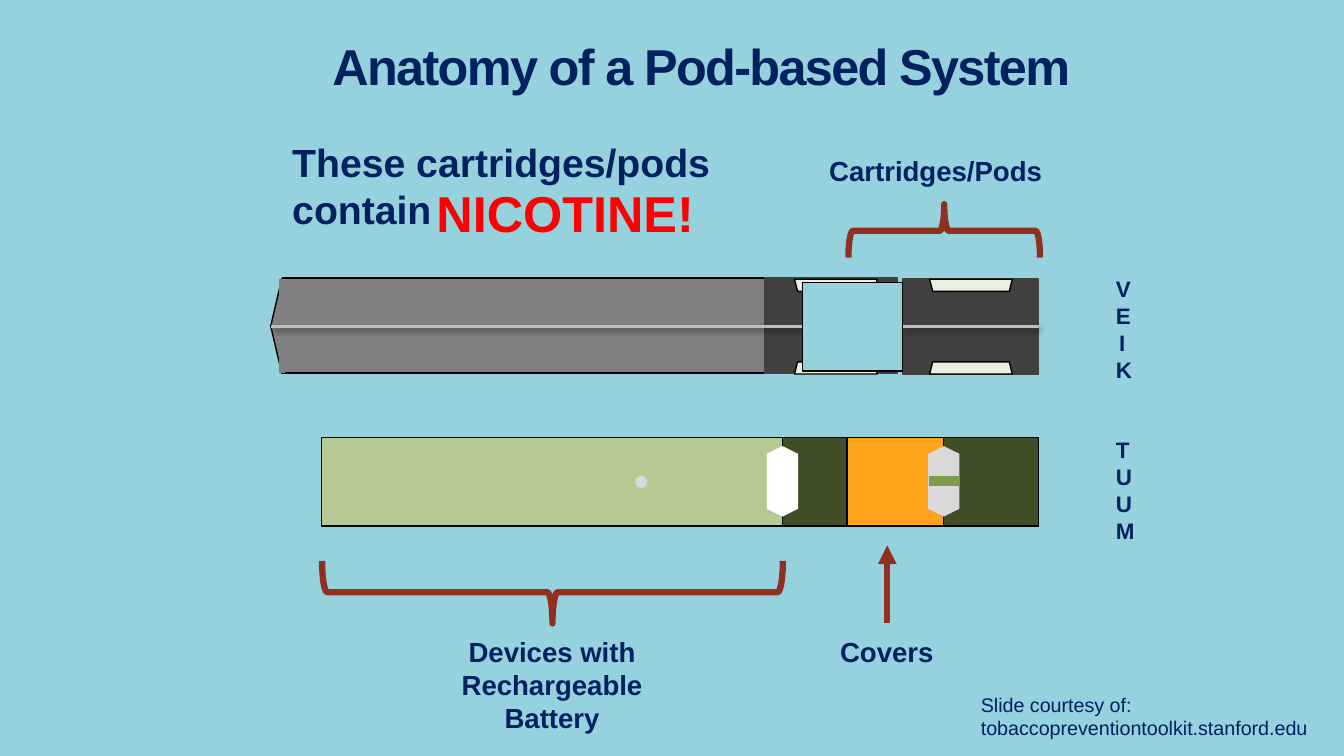
from dataclasses import dataclass

from lxml import etree
from pptx import Presentation
from pptx import util as u
from pptx.dml.color import RGBColor
from pptx.enum import shapes, text
from pptx.oxml import ns

G = shapes.MSO_SHAPE
PX = 9144


@dataclass(frozen=True)
class Theme:
    font: str = "Arial"
    sky: str = "96D2DE"
    navy: str = "002060"
    alert: str = "FF0000"
    rust: str = "903020"
    black: str = "000000"
    white: str = "FFFFFF"
    charcoal: str = "404040"
    steel: str = "808080"
    silver: str = "BFBFBF"
    pale: str = "D9D9D9"
    ivory: str = "EAF0E0"
    forest: str = "3F4E26"
    leaf: str = "7E9C4C"
    sage: str = "B5CA92"
    orange: str = "FFA319"
    big: float = 36
    lead: float = 28
    body: float = 19.7
    letter: float = 16
    note: float = 14.1


def px(*lengths):
    return [u.Emu(n * PX) for n in lengths]


def rgb(colour):
    return RGBColor.from_string(colour)


def write(tf, content, size, colour, font, bold=True, align=None, leading=None, spacing=None):
    tf.word_wrap = True
    tf.auto_size = text.MSO_AUTO_SIZE.NONE
    for i, line in enumerate(content.split("\n")):
        p = tf.paragraphs[0] if i == 0 else tf.add_paragraph()
        p.alignment = align
        p.line_spacing = leading
        r = p.add_run()
        r.text = line
        r.font.name, r.font.size, r.font.bold = font, u.Pt(size), bold
        r.font.color.rgb = rgb(colour)
        if spacing is not None:
            r.font._element.set("spc", str(spacing))


class Deck:
    def __init__(self, prs, theme):
        self.t = theme
        self.s = prs.slides.add_slide(prs.slide_layouts[5])
        self.s.background.fill.solid()
        self.s.background.fill.fore_color.rgb = rgb(theme.sky)

    def title(self, content, x, y, w, h):
        sp = self.s.shapes.title
        sp.left, sp.top, sp.width, sp.height = px(x, y, w, h)
        tf = sp.text_frame
        tf.vertical_anchor = text.MSO_ANCHOR.MIDDLE
        tf.margin_left, tf.margin_top, tf.margin_right, tf.margin_bottom = px(6, 6, 6, 6)
        write(tf, content, self.t.big, self.t.navy, self.t.font,
              align=text.PP_ALIGN.CENTER, leading=0.85, spacing=-120)

    def label(self, content, x, y, w, h, size, colour=None, bold=True, centred=True):
        tf = self.s.shapes.add_textbox(*px(x, y, w, h)).text_frame
        write(tf, content, size, colour or self.t.navy, self.t.font, bold=bold,
              align=text.PP_ALIGN.CENTER if centred else text.PP_ALIGN.LEFT)

    def shape(self, kind, x, y, w, h, fill=None, line=None, weight=1, turn=0):
        sp = self.s.shapes.add_shape(kind, *px(x, y, w, h))
        sp.shadow.inherit = False
        sp.rotation = turn
        if fill:
            sp.fill.solid()
            sp.fill.fore_color.rgb = rgb(fill)
        else:
            sp.fill.background()
        if line:
            sp.line.color.rgb = rgb(line)
            sp.line.width = u.Pt(weight)
        else:
            sp.line.fill.background()
        return sp

    def line(self, x1, y1, x2, y2, colour, weight, arrow=False, shadow=False):
        c = self.s.shapes.add_connector(shapes.MSO_CONNECTOR.STRAIGHT, *px(x1, y1, x2, y2))
        c.line.color.rgb = rgb(colour)
        c.line.width = u.Pt(weight)
        spPr = c._element.spPr
        if arrow:
            etree.SubElement(spPr.find(ns.qn("a:ln")), ns.qn("a:tailEnd"), type="triangle")
        effects = etree.SubElement(spPr, ns.qn("a:effectLst"))
        if shadow:
            outer = etree.SubElement(effects, ns.qn("a:outerShdw"), blurRad="50800",
                                     dist="38100", dir="2700000", algn="tl", rotWithShape="0")
            tone = etree.SubElement(outer, ns.qn("a:srgbClr"), val=self.t.black)
            etree.SubElement(tone, ns.qn("a:alpha"), val="40000")
        return c

    def brace(self, x, y, w, h, turn):
        self.shape(G.LEFT_BRACE, x, y, w, h, line=self.t.rust, weight=4.5, turn=turn)

    def notches(self, x):
        for y, turn in ((359, 0), (277, 180)):
            self.shape(G.TRAPEZOID, x, y, 82, 12, self.t.ivory, self.t.black, turn=turn)

    def window(self, x, fill):
        self.shape(G.HEXAGON, x, 462, 70, 31, fill, turn=90)


def draw_lower_device(d):
    t = d.t
    for x, w, fill in ((776, 94, t.forest), (936, 94, t.forest),
                       (840, 96, t.orange), (319, 457, t.sage)):
        d.shape(G.RECTANGLE, x, 434, w, 88, fill, t.black)
    d.window(901, t.pale)
    d.line(921, 477, 952, 477, t.leaf, 7.5)
    d.window(741, t.white)
    d.shape(G.OVAL, 630, 472, 12, 12, t.pale)


def draw_upper_device(d):
    t = d.t
    d.shape(G.RECTANGLE, 280, 276, 480, 94, t.steel, t.black)
    d.shape(G.RECTANGLE, 758, 276, 132, 94, t.charcoal, t.charcoal)
    d.notches(788)
    d.shape(G.ISOSCELES_TRIANGLE, 227, 318, 94, 11, t.steel, t.black, turn=270)
    d.line(280, 277, 280, 370, t.steel, 4.5)
    device_seam = d.line(269, 324, 796, 324, t.silver, 2.25, shadow=True)
    pod = d.shape(G.RECTANGLE, 895, 277, 135, 94, t.charcoal, t.charcoal)
    d.notches(922)
    pod_seam = d.line(895, 324, 1030, 324, t.silver, 2.25, shadow=True)
    pod_seam.begin_connect(pod, 1)
    pod_seam.end_connect(pod, 3)
    gap = d.shape(G.RECTANGLE, 796, 280, 99, 88, t.sky, t.black)
    device_seam.end_connect(gap, 1)


def draw_labels(d):
    t = d.t
    d.brace(517, 359, 62, 457, 270)
    d.brace(910, 134, 53, 190, 90)
    d.label("Cartridges/Pods", 746, 148, 364, 43, t.body)
    d.label("Devices with Rechargeable\nBattery", 382, 625, 331, 110, t.body)
    d.label("Covers", 780, 625, 199, 43, t.body)
    d.line(880, 618, 880, 541, t.rust, 4.5, arrow=True)
    d.label("Slide courtesy of:\ntobaccopreventiontoolkit.stanford.edu",
            963, 682, 348, 57, t.note, bold=False, centred=False)
    for name, y in (("VEIK", 268), ("TUUM", 428)):
        d.label("\n".join(name), 1097, y, 32, 118, t.letter)
    d.label("These cartridges/pods contain", 280, 132, 499, 104, t.lead, centred=False)
    d.label("NICOTINE!", 423, 176, 292, 71, t.big, t.alert, centred=False)


def main():
    prs = Presentation()
    prs.slide_width, prs.slide_height = px(1333, 750)
    d = Deck(prs, Theme())
    d.title("Anatomy of a Pod-based System", 293, 17, 805, 105)
    draw_lower_device(d)
    draw_upper_device(d)
    draw_labels(d)
    prs.save("out.pptx")


if __name__ == "__main__":
    main()
